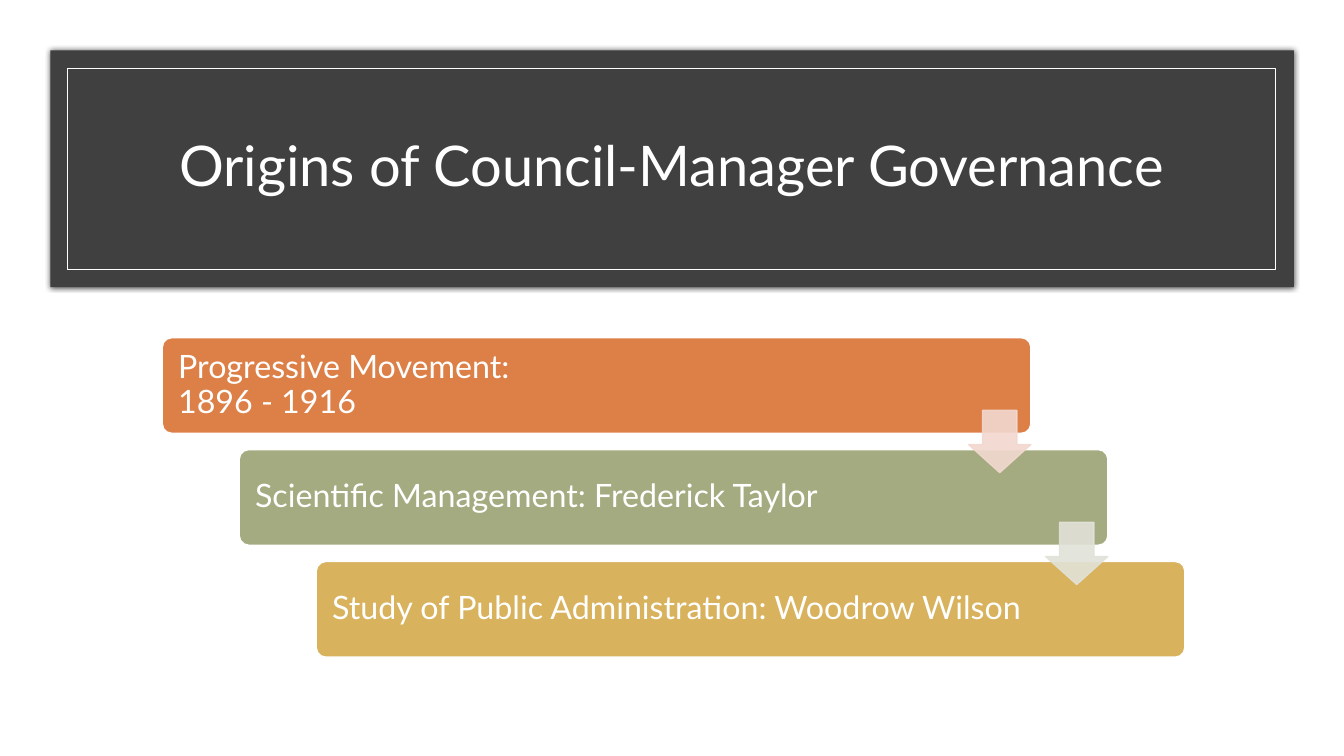
from lxml.etree import SubElement as Sub
from pptx import Presentation
from pptx.dml.color import RGBColor as RGB
from pptx.enum.shapes import MSO_SHAPE as Kind
from pptx.enum.text import MSO_ANCHOR as Anchor, PP_ALIGN as Align
from pptx.oxml import parse_xml
from pptx.oxml.ns import nsdecls, qn
from pptx.util import Cm, Pt

HUES = {
    "white": "FFFFFF", "dark": "404040", "orange": "DD8047", "green": "A5AB81",
    "gold": "D8B25C", "pink": "F2D8CF", "sage": "E1E2D8",
}


def draw(kind, left, top, width, height, fill=None, line=None, weight=1):
    shape = slide.shapes.add_shape(kind, Cm(left), Cm(top), Cm(width), Cm(height))
    shape.shadow.inherit = False
    if fill:
        shape.fill.solid()
        shape.fill.fore_color.rgb = RGB.from_string(HUES[fill])
    else:
        shape.fill.background()
    if line:
        shape.line.color.rgb = RGB.from_string(HUES[line])
        shape.line.width = Pt(weight)
    else:
        shape.line.fill.background()
    return shape


def write(shape, lines, size, align):
    frame = shape.text_frame
    frame.word_wrap = True
    frame.vertical_anchor = Anchor.MIDDLE
    para = frame.paragraphs[0]
    para.alignment = align
    para.line_spacing = 0.9
    for i, text in enumerate(lines):
        if i:
            para.add_line_break()
        run = para.add_run()
        run.text = text
        run.font.size = Pt(size)
        run.font.name = "Lato"
        run.font.color.rgb = RGB.from_string(HUES["white"])


deck = Presentation()
deck.slide_width, deck.slide_height = Cm(33.87), Cm(19.05)
slide = deck.slides.add_slide(deck.slide_layouts[5])
slide.background.fill.solid()
slide.background.fill.fore_color.rgb = RGB.from_string(HUES["white"])

panel = draw(Kind.RECTANGLE, 1.27, 1.27, 31.34, 5.97, "dark")
props = panel.element.spPr
props.remove(props.find(qn("a:effectLst")))
props.append(parse_xml(
    f'<a:effectLst {nsdecls("a")}><a:outerShdw blurRad="50800" dist="0" dir="0" '
    'algn="ctr" rotWithShape="0"><a:srgbClr val="000000"><a:alpha val="66000"/>'
    '</a:srgbClr></a:outerShdw></a:effectLst>'))
draw(Kind.RECTANGLE, 1.7, 1.73, 30.43, 5.05, line="white", weight=0.5)

title = slide.shapes.title
title.left, title.top, title.width, title.height = Cm(2.95), Cm(2.34), Cm(27.94), Cm(3.81)
write(title, ["Origins of Council-Manager Governance"], 40, Align.CENTER)
title.element.getparent().append(title.element)

left, top, width, height = 4.09, 8.51, 21.89, 2.41
across, down = 1.94, 2.82
steps = [
    ("orange", ["Progressive Movement:", "1896 - 1916"]),
    ("green", ["Scientific Management: Frederick Taylor"]),
    ("gold", ["Study of Public Administration: Woodrow Wilson"]),
]
for i, (hue, lines) in enumerate(steps):
    bar = draw(Kind.ROUNDED_RECTANGLE, left + i * across, top + i * down,
               width, height, hue, "white")
    bar.adjustments[0] = 0.1
    bar.text_frame.margin_left = Cm(0.33)
    write(bar, lines, 23, Align.LEFT)

size = 1.57
for i, hue in enumerate(["pink", "sage"]):
    arrow = draw(Kind.DOWN_ARROW, left + width - size + i * across,
                 top + 1.83 + i * down, size, size, hue, hue)
    arrow.adjustments[0] = 0.55
    arrow.adjustments[1] = 0.45
    for color in arrow.element.spPr.iter(qn("a:srgbClr")):
        Sub(color, qn("a:alpha"), val="90000")

deck.save("out.pptx")
